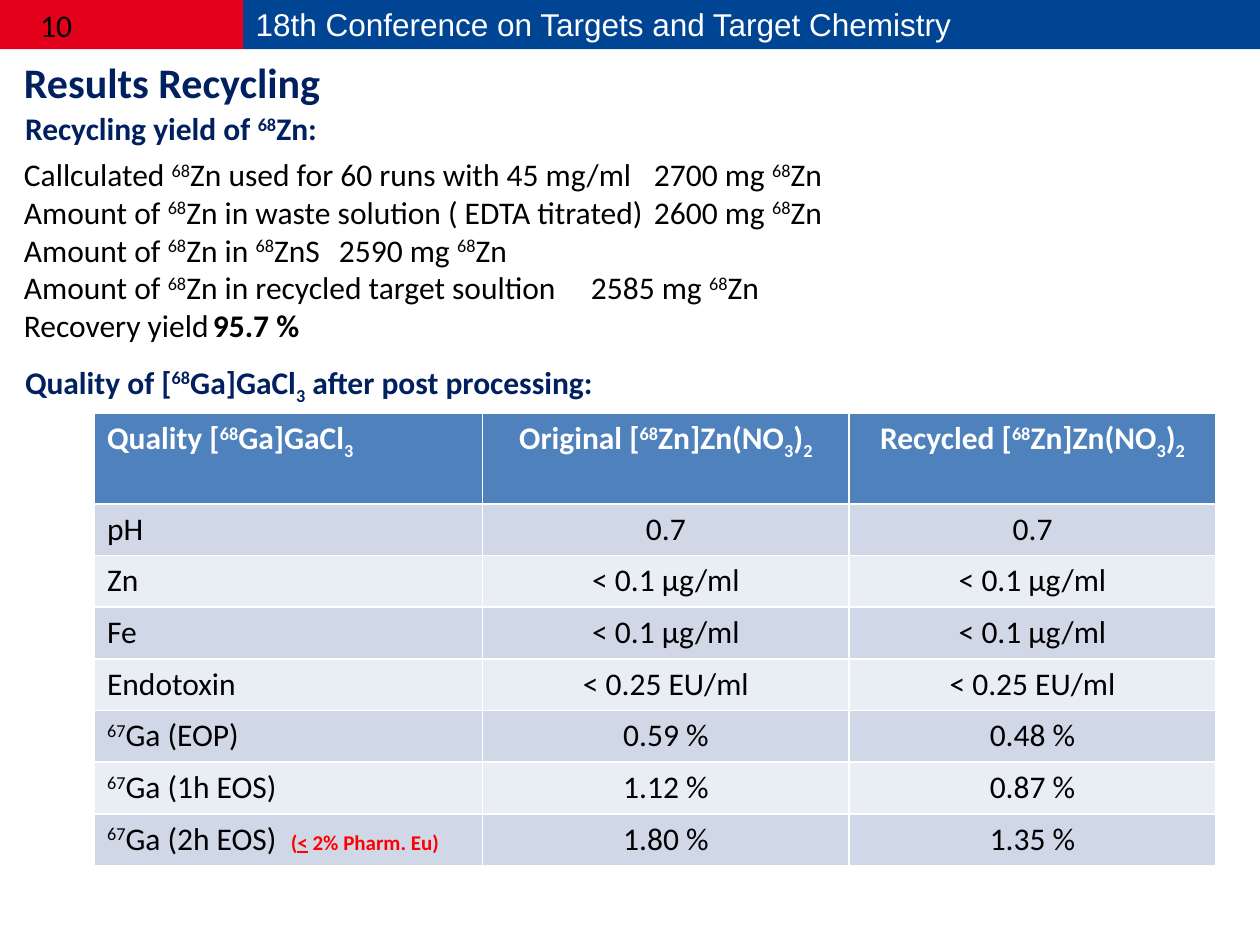
from lxml.etree import SubElement
from pptx import Presentation
from pptx.dml.color import RGBColor
from pptx.enum.shapes import MSO_SHAPE
from pptx.enum.text import MSO_ANCHOR, PP_ALIGN
from pptx.oxml.ns import qn
from pptx.util import Inches, Pt

NAVY, BLACK, WHITE, RED = "002060", "000000", "FFFFFF", "FF0000"
HEADER_BLUE, BAND_DARK, BAND_LIGHT = "4F81BD", "D0D8E8", "E9EDF4"
BASELINES = {"^": "30000", "_": "-25000"}

YIELDS = [
    ("Callculated |^68|Zn used for 60 runs with 45 mg/ml", "2700 mg |^68|Zn"),
    ("Amount of |^68|Zn in waste solution ( EDTA titrated)", "2600 mg |^68|Zn"),
    ("Amount of |^68|Zn in |^68|ZnS", "2590 mg |^68|Zn"),
    ("Amount of |^68|Zn in recycled target soultion", "2585 mg |^68|Zn"),
]
QUALITY = [
    ("Quality [|^68|Ga]GaCl|_3", "Original [|^68|Zn]Zn(NO|_3|)|_2",
     "Recycled [|^68|Zn]Zn(NO|_3|)|_2"),
    ("pH", "0.7", "0.7"),
    ("Zn", "< 0.1 µg/ml", "< 0.1 µg/ml"),
    ("Fe", "< 0.1 µg/ml", "< 0.1 µg/ml"),
    ("Endotoxin", "< 0.25 EU/ml", "< 0.25 EU/ml"),
    ("^67|Ga (EOP)", "0.59 %", "0.48 %"),
    ("^67|Ga (1h EOS)", "1.12 %", "0.87 %"),
    ("^67|Ga (2h EOS)  ", "1.80 %", "1.35 %"),
]


def rgb(value):
    return RGBColor.from_string(value)


def write(para, text, size=18, color=BLACK, bold=False, underline=None, font="Calibri"):
    """Append runs split at "|"; a leading ^ raises a run and _ lowers it."""
    for piece in text.split("|"):
        span = para.add_run()
        span.text = piece.lstrip("^_")
        span.font.name = font
        span.font.size = Pt(size)
        span.font.bold = bold
        span.font.underline = underline
        span.font.color.rgb = rgb(color)
        if piece[0] in BASELINES:
            span.font._element.set("baseline", BASELINES[piece[0]])


class PageBuilder:
    def __init__(self, page):
        self.page = page

    def place(self, shape, left, top, width, height):
        shape.left, shape.top = Inches(left), Inches(top)
        shape.width, shape.height = Inches(width), Inches(height)

    def bar(self, left, width, color):
        shape = self.page.shapes.add_shape(
            MSO_SHAPE.RECTANGLE, Inches(left), Inches(-0.02), Inches(width), Inches(0.41))
        shape.shadow.inherit = False
        shape.fill.solid()
        shape.fill.fore_color.rgb = rgb(color)
        shape.line.fill.background()

    def text(self, text, left, top, width, height, **style):
        box = self.page.shapes.add_textbox(
            Inches(left), Inches(top), Inches(width), Inches(height))
        box.text_frame.word_wrap = True
        write(box.text_frame.paragraphs[0], text, **style)

    def title(self, text):
        title = self.page.shapes.title
        self.place(title, 0.09, 0.4, 3.54, 0.5)
        title.text_frame.vertical_anchor = MSO_ANCHOR.TOP
        para = title.text_frame.paragraphs[0]
        para.alignment = PP_ALIGN.LEFT
        write(para, text, size=24, color=NAVY, bold=True)

    def yield_list(self, rows, total):
        """Fill the body placeholder, with the values lined up at one tab stop."""
        body = self.page.placeholders[1]
        self.place(body, 0.09, 1.18, 9.9, 1.62)
        frame = body.text_frame
        for index, (label, value) in enumerate([*rows, total]):
            para = frame.add_paragraph() if index else frame.paragraphs[0]
            properties = para._p.get_or_add_pPr()
            properties.set("marL", "0")
            properties.set("indent", "0")
            SubElement(properties, qn("a:buNone"))
            tabs = SubElement(properties, qn("a:tabLst"))
            SubElement(tabs, qn("a:tab"), pos=str(Inches(7)), algn="l")
            para.space_before = Pt(0)
            write(para, label + "\t")
            write(para, value, bold=index == len(rows))

    def quality_table(self, rows, left, top, widths, header_height, row_height):
        height = header_height + row_height * (len(rows) - 1)
        table = self.page.shapes.add_table(
            len(rows), len(widths), Inches(left), Inches(top),
            Inches(sum(widths)), Inches(height)).table
        for column, width in zip(table.columns, widths):
            column.width = Inches(width)
        for r, values in enumerate(rows):
            table.rows[r].height = Inches(row_height if r else header_height)
            band = BAND_DARK if r % 2 else BAND_LIGHT
            for c, value in enumerate(values):
                cell = table.cell(r, c)
                cell.fill.solid()
                cell.fill.fore_color.rgb = rgb(band if r else HEADER_BLUE)
                para = cell.text_frame.paragraphs[0]
                para.alignment = PP_ALIGN.CENTER if c else PP_ALIGN.LEFT
                write(para, value, color=BLACK if r else WHITE, bold=r == 0)
        return table


def main():
    deck = Presentation()
    deck.slide_width, deck.slide_height = Inches(10), Inches(7.5)
    builder = PageBuilder(deck.slides.add_slide(deck.slide_layouts[1]))

    builder.bar(1.93, 8.07, "004494")
    builder.bar(0, 1.93, "E2001A")
    builder.title("Results Recycling")
    builder.text("18th Conference on Targets and Target Chemistry",
                 1.93, -0.01, 8.07, 0.47, color=WHITE, font="Arial")
    builder.text("10", 0.22, 0, 1.4, 0.4)
    for heading, top in (("Recycling yield of |^68|Zn:", 0.82),
                         ("Quality of [|^68|Ga]GaCl|_3| after post processing:", 2.83)):
        builder.text(heading, 0.1, top, 6.79, 0.4, color=NAVY, bold=True)
    builder.yield_list(YIELDS, ("Recovery yield", "95.7 %"))

    table = builder.quality_table(QUALITY, 0.75, 3.28, (3.08, 2.91, 2.91), 0.72, 0.41)
    limit = table.cell(len(QUALITY) - 1, 0).text_frame.paragraphs[0]
    for text, underline in (("(", None), ("<", True), (" 2% Pharm. Eu)", None)):
        write(limit, text, size=12, color=RED, bold=True, underline=underline)

    deck.save("out.pptx")


if __name__ == "__main__":
    main()
